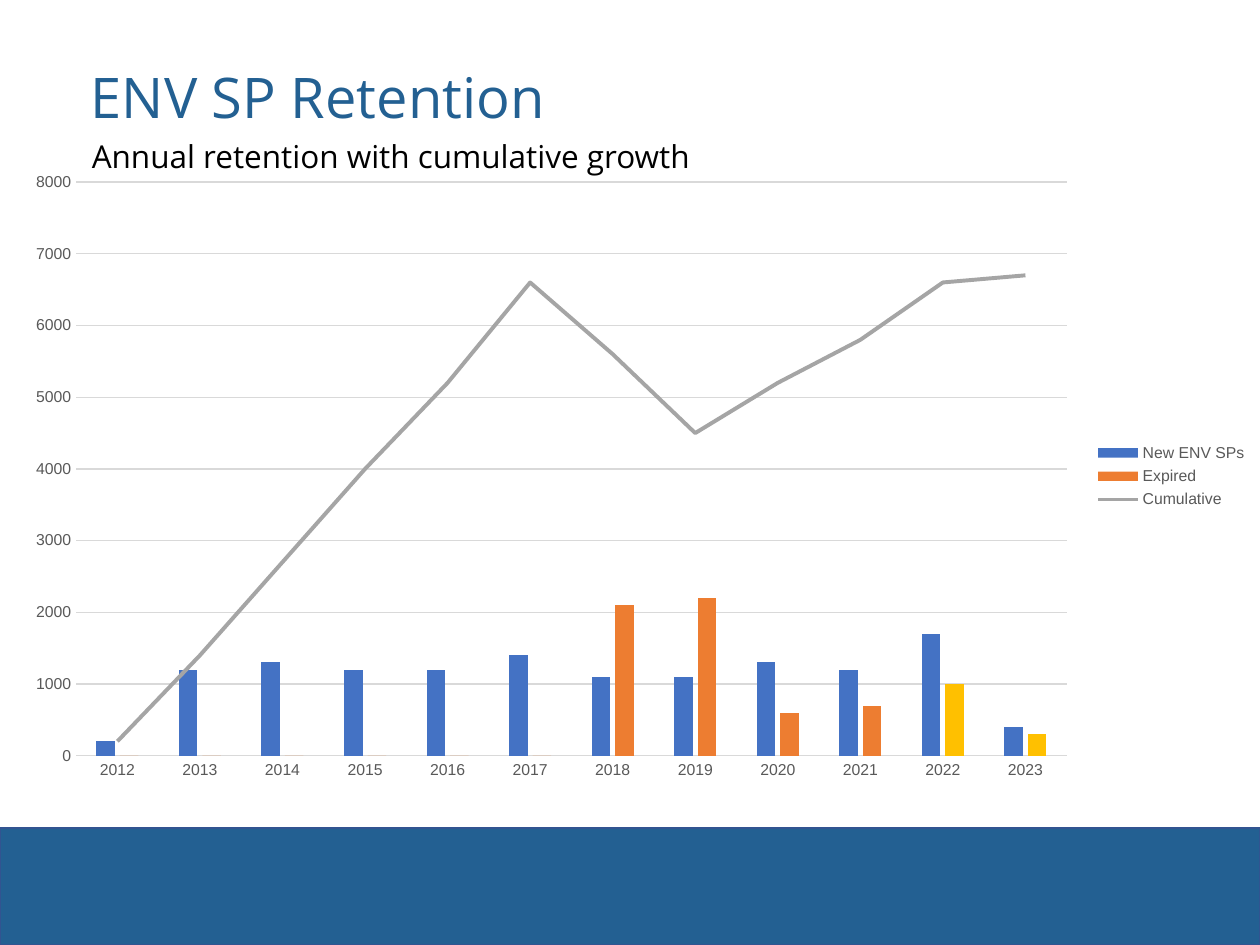
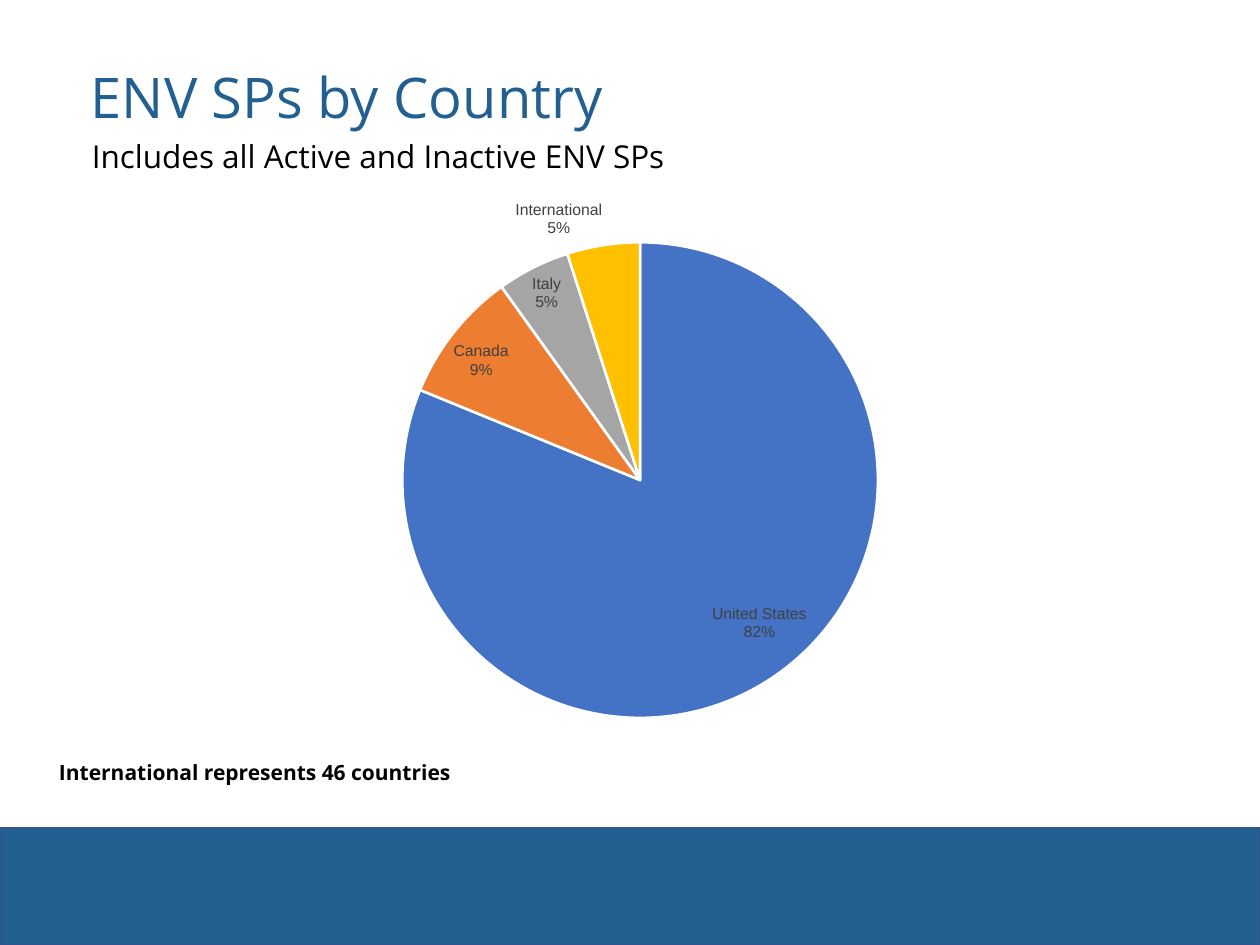
from lxml import etree
from pptx import Presentation
from pptx.chart.data import CategoryChartData
from pptx.dml.color import RGBColor
from pptx.enum.chart import XL_CHART_TYPE, XL_LABEL_POSITION, XL_LEGEND_POSITION, XL_MARKER_STYLE, XL_TICK_MARK
from pptx.enum.shapes import MSO_SHAPE
from pptx.enum.text import MSO_ANCHOR, PP_ALIGN
from pptx.oxml import parse_xml
from pptx.oxml.ns import nsdecls, qn
from pptx.util import Inches, Pt

COLUMN, PIE = XL_CHART_TYPE.COLUMN_CLUSTERED, XL_CHART_TYPE.PIE
BEST_FIT = XL_LABEL_POSITION.BEST_FIT
LEGEND_RIGHT = XL_LEGEND_POSITION.RIGHT
NO_MARKER = XL_MARKER_STYLE.NONE
NO_TICK = XL_TICK_MARK.NONE
RECTANGLE = MSO_SHAPE.RECTANGLE
TOP, MIDDLE = MSO_ANCHOR.TOP, MSO_ANCHOR.MIDDLE
LEFT = PP_ALIGN.LEFT

TITLE_ONLY = 5
TEXT_FONT, CHART_FONT = "Open Sans", "Arial"
COLORS = {
    "brand": "236092", "band line": "325491", "black": "000000", "white": "FFFFFF",
    "axis text": "595959", "label text": "404040", "grid": "D9D9D9",
    "blue": "4472C4", "orange": "ED7D31", "gray": "A5A5A5", "yellow": "FFC000",
}

YEARS = [str(year) for year in range(2012, 2024)]
NEW_SPS = [200, 1200, 1300, 1200, 1200, 1400, 1100, 1100, 1300, 1200, 1700, 400]
EXPIRED = [0] * 6 + [2100, 2200, 600, 700, 1000, 300]
CUMULATIVE = [200, 1400, 2700, 4000, 5200, 6600, 5600, 4500, 5200, 5800, 6600, 6700]
COUNTRY_SHARES = {"United States": 82, "Canada": 9, "Italy": 5, "International": 5}


def color(name):
    return RGBColor.from_string(COLORS[name])


def inches(lengths):
    return [Inches(length) for length in lengths]


def paint(item, color_name):
    item.format.fill.solid()
    item.format.fill.fore_color.rgb = color(color_name)


def set_font(font, name, size, color_name, bold=False):
    font.name, font.size, font.bold = name, Pt(size), bold
    font.color.rgb = color(color_name)


def write(shape, text, size, color_name, anchor=TOP, spacing=1.0, bold=False):
    frame = shape.text_frame
    frame.word_wrap = True
    frame.vertical_anchor = anchor
    frame.text = text
    para = frame.paragraphs[0]
    para.alignment = LEFT
    para.line_spacing = spacing
    set_font(para.font, TEXT_FONT, size, color_name, bold)


def add_text(slide, place, text, size, **style):
    write(slide.shapes.add_textbox(*inches(place)), text, size, "black", **style)


def add_band(slide):
    band = slide.shapes.add_shape(RECTANGLE, *inches((0, 6.57, 10, 0.93)))
    band.shadow.inherit = False
    band.fill.solid()
    band.fill.fore_color.rgb = color("brand")
    band.line.color.rgb = color("band line")
    band.line.width = Pt(1)


def add_titled_slide(deck, title, subtitle):
    slide = deck.slides.add_slide(deck.slide_layouts[TITLE_ONLY])
    add_band(slide)
    heading = slide.shapes.title
    heading.left, heading.top, heading.width, heading.height = inches((0.62, 0.42, 8.75, 0.75))
    write(heading, title, 32, "brand", anchor=MIDDLE, spacing=0.9)
    add_text(slide, (0.63, 1.04, 9.02, 0.4), subtitle, 18)
    return slide


def add_chart(slide, kind, place, categories, series, plot_place):
    """Add a chart whose inner plot area sits at plot_place, in shares of the chart."""
    data = CategoryChartData(number_format="General")
    data.categories = categories
    for name, values in series.items():
        data.add_series(name, values)
    chart = slide.shapes.add_chart(kind, *inches(place), data).chart
    chart.has_title = False
    chart.has_legend = False
    set_font(chart.font, CHART_FONT, 10, "black")

    plot_area = chart.plots[0]._element.getparent()
    for old_layout in plot_area.findall(qn("c:layout")):
        plot_area.remove(old_layout)
    sizes = "".join(f'<c:{key} val="{share}"/>' for key, share in zip("xywh", plot_place))
    plot_area.insert(0, parse_xml(
        f'<c:layout {nsdecls("c")}><c:manualLayout><c:layoutTarget val="inner"/>'
        f'<c:xMode val="edge"/><c:yMode val="edge"/>{sizes}</c:manualLayout></c:layout>'))
    return chart


def move_last_series_to_line(chart):
    bars = chart.plots[0]._element
    series = bars.findall(qn("c:ser"))[-1]
    for bar_setting in series.findall(qn("c:invertIfNegative")):
        series.remove(bar_setting)
    line = parse_xml(
        f'<c:lineChart {nsdecls("c")}><c:grouping val="standard"/><c:varyColors val="0"/>'
        '<c:marker val="1"/></c:lineChart>')
    line.insert(2, series)
    for axis in bars.findall(qn("c:axId")):
        etree.SubElement(line, qn("c:axId")).set("val", axis.get("val"))
    bars.addnext(line)
    return chart.plots[1].series[0]


def style_axes(chart):
    for axis in (chart.category_axis, chart.value_axis):
        axis.major_tick_mark = axis.minor_tick_mark = NO_TICK
        set_font(axis.tick_labels.font, CHART_FONT, 9, "axis text")
    chart.value_axis.minimum_scale = 0
    chart.value_axis.maximum_scale = 8000
    chart.value_axis.major_unit = 1000
    chart.value_axis.format.line.fill.background()
    for part in (chart.category_axis, chart.value_axis.major_gridlines):
        part.format.line.color.rgb = color("grid")
        part.format.line.width = Pt(0.75)


def add_retention_chart(slide):
    series = {"New ENV SPs": NEW_SPS, "Expired": EXPIRED, "Cumulative": CUMULATIVE}
    chart = add_chart(slide, COLUMN, (0.11, 1.27, 9.89, 5.02), YEARS, series,
                      (0.05, 0.035, 0.795, 0.907))
    style_axes(chart)
    cumulative = move_last_series_to_line(chart)
    cumulative.smooth = False
    cumulative.marker.style = NO_MARKER
    cumulative.format.line.color.rgb = color("gray")
    cumulative.format.line.width = Pt(2.25)

    columns = chart.plots[0]
    columns.vary_by_categories = False
    columns.gap_width, columns.overlap = 219, -27
    new_sps, expired = columns.series
    paint(new_sps, "blue")
    paint(expired, "orange")
    for year in ("2022", "2023"):
        paint(expired.points[YEARS.index(year)], "yellow")

    chart.has_legend = True
    chart.legend.position = LEGEND_RIGHT
    chart.legend.include_in_layout = False
    set_font(chart.legend.font, CHART_FONT, 9, "axis text")


def add_country_chart(slide):
    chart = add_chart(slide, PIE, (1.28, 1.44, 7.31, 4.39), list(COUNTRY_SHARES),
                      {"Series 1": list(COUNTRY_SHARES.values())}, (0.26, 0.11, 0.52, 0.86))
    pie = chart.plots[0]
    pie.vary_by_categories = True
    for index, name in enumerate(("blue", "orange", "gray", "yellow")):
        point = pie.series[0].points[index]
        paint(point, name)
        point.format.line.color.rgb = color("white")
        point.format.line.width = Pt(1.5)

    labels = pie.series[0].data_labels
    labels.show_category_name = labels.show_value = True
    labels.number_format, labels.number_format_is_linked = '0"%"', False
    labels.position = BEST_FIT
    set_font(labels.font, CHART_FONT, 9, "label text")
    separator = parse_xml(f'<c:separator {nsdecls("c")}>\n</c:separator>')
    last_switch = [part for part in labels._element if part.tag.startswith(qn("c:show"))
                   and part.tag != qn("c:showLeaderLines")][-1]
    last_switch.addnext(separator)


def main():
    deck = Presentation()
    deck.slide_width, deck.slide_height = Inches(10), Inches(7.5)

    retention = add_titled_slide(deck, "ENV SP Retention", "Annual retention with cumulative growth")
    add_retention_chart(retention)

    countries = add_titled_slide(deck, "ENV SPs by Country", "Includes all Active and Inactive ENV SPs")
    add_text(countries, (0.37, 5.76, 3.34, 0.66), "International represents 46 countries", 12,
             anchor=MIDDLE, spacing=1.4, bold=True)
    add_country_chart(countries)

    deck.save("out.pptx")


if __name__ == "__main__":
    main()
